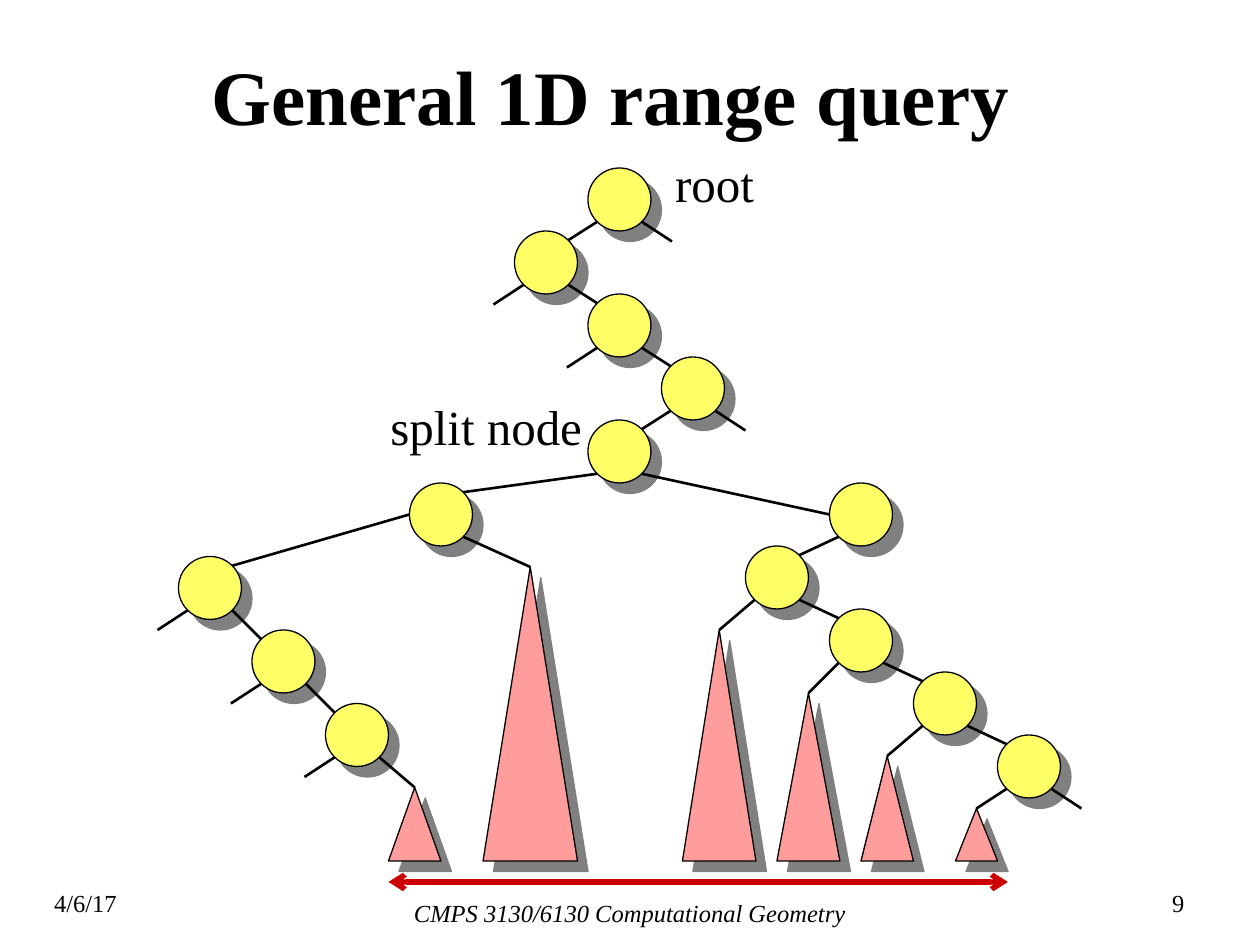
import math
from dataclasses import dataclass

import pptx
import pptx.dml.color
import pptx.enum.shapes
import pptx.enum.text
import pptx.oxml
import pptx.oxml.ns
import pptx.util

Cm, Pt = pptx.util.Cm, pptx.util.Pt
RGB = pptx.dml.color.RGBColor
SHAPE = pptx.enum.shapes.MSO_SHAPE
STRAIGHT = pptx.enum.shapes.MSO_CONNECTOR.STRAIGHT
ALIGN = pptx.enum.text.PP_ALIGN
AUTO_SIZE = pptx.enum.text.MSO_AUTO_SIZE
NS = pptx.oxml.ns.nsdecls("a")


@dataclass(frozen=True)
class Theme:
    font: str = "Times New Roman"
    ink: str = "000000"
    node: str = "FFFF66"
    subtree: str = "FF9D9D"
    shadow: str = "808080"
    range: str = "CC0000"
    title_size: float = 44
    label_size: float = 28
    footer_size: float = 14
    outline: float = 0.75
    edge: float = 1.5
    arrow: float = 3


@dataclass(frozen=True)
class Node:
    """A tree node, centred at a grid position."""
    x: float
    y: float

    def corner(self, dx: int, dy: int) -> tuple[float, float]:
        """Rim point towards (dx, dy), each -1, 0 or 1."""
        reach = RADIUS / math.hypot(dx, dy)
        return self.x + dx * reach, self.y + dy * reach


@dataclass(frozen=True)
class Subtree:
    left: float
    top: float
    width: float
    parent: str
    side: int


@dataclass(frozen=True)
class Label:
    text: str
    left: float
    top: float
    width: float
    height: float
    size: float
    align: ALIGN = ALIGN.LEFT
    italic: bool = False


THEME = Theme()
GRID = 25.4 / 120  # cm in one grid step
RADIUS = 3
BASE = 82
LEFT, RIGHT = -1, 1

NODES = {
    "root": Node(59, 19), "path 1": Node(52, 25), "path 2": Node(59, 31),
    "path 3": Node(66, 37), "split": Node(59, 43),
    "left 1": Node(42, 49), "left 2": Node(20, 56),
    "left 3": Node(27, 63), "left 4": Node(34, 70),
    "right 1": Node(82, 49), "right 2": Node(74, 55), "right 3": Node(82, 61),
    "right 4": Node(90, 67), "right 5": Node(98, 73),
}
SUBTREES = [
    Subtree(46, 54, 9, "left 1", RIGHT), Subtree(37, 75, 5, "left 4", RIGHT),
    Subtree(65, 60, 7, "right 2", LEFT), Subtree(74, 66, 6, "right 3", LEFT),
    Subtree(82, 72, 5, "right 4", LEFT), Subtree(91, 77, 4, "right 5", LEFT),
]
CHAINS = [
    ["root", "path 1", "path 2", "path 3", "split", "left 1"],
    ["left 2", "left 3", "left 4"],
    ["right 1", "right 2", "right 3", "right 4", "right 5"],
]
STUBS = [("root", RIGHT), ("path 1", LEFT), ("path 2", LEFT), ("path 3", RIGHT),
         ("left 2", LEFT), ("left 3", LEFT), ("left 4", LEFT), ("right 5", RIGHT)]
LABELS = [
    Label("root", 13.36, 2.97, 2.11, 1.45, THEME.label_size),
    Label("split node", 7.62, 7.87, 4.37, 1.45, THEME.label_size),
    Label("4/6/17", 0.84, 17.78, 1.78, 0.86, THEME.footer_size),
    Label("CMPS 3130/6130 Computational Geometry", 8, 17.98, 9.4, 0.86,
          THEME.footer_size, ALIGN.CENTER, True),
    Label("9", 23.04, 17.78, 1.09, 0.86, THEME.footer_size, ALIGN.RIGHT),
]


def grid(*steps: float) -> list[pptx.util.Length]:
    return [Cm(n * GRID) for n in steps]


def write(tf, text: str, align: ALIGN, **fmt):
    p = tf.paragraphs[0]
    p.alignment = align
    r = p.add_run()
    r.text = text
    r.font.color.rgb = RGB.from_string(THEME.ink)
    for name, value in ({"name": THEME.font} | fmt).items():
        setattr(r.font, name, value)
    return p


def add_title(s, text: str) -> None:
    sp = s.shapes.title
    place = {"left": Cm(4.01), "top": Cm(0.43), "width": Cm(20.96), "height": Cm(3.18)}
    for name, value in place.items():
        setattr(sp, name, value)
    tf = sp.text_frame
    tf.auto_size = AUTO_SIZE.NONE
    tf.vertical_anchor = pptx.enum.text.MSO_ANCHOR.MIDDLE
    p = write(tf, text, ALIGN.LEFT, size=Pt(THEME.title_size), bold=True)
    p.line_spacing = 0.9


def add_label(s, label: Label) -> None:
    tf = s.shapes.add_textbox(Cm(label.left), Cm(label.top),
                              Cm(label.width), Cm(label.height)).text_frame
    tf.word_wrap = False
    tf.auto_size = AUTO_SIZE.SHAPE_TO_FIT_TEXT
    write(tf, label.text, label.align, size=Pt(label.size), italic=label.italic)


def add_solid(s, kind: SHAPE, box: tuple, fill: str):
    """Add an outlined shape with a hard shadow down to the right."""
    sp = s.shapes.add_shape(kind, *grid(*box))
    sp.fill.solid()
    sp.fill.fore_color.rgb = RGB.from_string(fill)
    sp.line.color.rgb = RGB.from_string(THEME.ink)
    sp.line.width = Pt(THEME.outline)
    sp.shadow.inherit = False
    effects = sp._element.spPr.find(pptx.oxml.ns.qn("a:effectLst"))
    effects.append(pptx.oxml.parse_xml(
        f'<a:outerShdw {NS} blurRad="0" dist="{Pt(8.5)}" dir="2700000" algn="ctr" '
        f'rotWithShape="0"><a:srgbClr val="{THEME.shadow}"/></a:outerShdw>'))
    return sp


def add_line(s, start: tuple, end: tuple, color: str = THEME.ink,
             width: float = THEME.edge):
    line = s.shapes.add_connector(STRAIGHT, *grid(*start, *end))
    line.line.color.rgb = RGB.from_string(color)
    line.line.width = Pt(width)
    line._element.spPr.append(pptx.oxml.parse_xml(f"<a:effectLst {NS}/>"))
    return line


def add_subtree(s, tree: Subtree) -> None:
    sp = add_solid(s, SHAPE.ISOSCELES_TRIANGLE,
                   (tree.left, tree.top, tree.width, BASE - tree.top), THEME.subtree)
    apex = (tree.left + tree.width / 2, tree.top)
    line = add_line(s, NODES[tree.parent].corner(tree.side, 1), apex)
    line.end_connect(sp, 0)


def add_edges(s) -> None:
    for chain in CHAINS:
        for parent, child in zip(chain, chain[1:]):
            a, b = NODES[parent], NODES[child]
            side = RIGHT if b.x > a.x else LEFT
            add_line(s, a.corner(side, 1), b.corner(-side, -1))
    add_line(s, NODES["left 1"].corner(LEFT, 0), NODES["left 2"].corner(RIGHT, -1))
    add_line(s, NODES["split"].corner(RIGHT, 1), NODES["right 1"].corner(LEFT, 0))
    for name, side in STUBS:
        node = NODES[name]
        add_line(s, node.corner(side, 1), (node.x + 5 * side, node.y + 4))


def add_range_arrow(s) -> None:
    line = add_line(s, (37, 84), (96, 84), THEME.range, THEME.arrow)
    for tag in ("headEnd", "tailEnd"):
        line.line._get_or_add_ln().append(
            pptx.oxml.parse_xml(f'<a:{tag} {NS} type="arrow"/>'))


def main() -> None:
    prs = pptx.Presentation()
    prs.slide_width, prs.slide_height = Cm(25.4), Cm(19.05)
    s = prs.slides.add_slide(prs.slide_layouts[5])
    add_title(s, "General 1D range query")
    for node in NODES.values():
        add_solid(s, SHAPE.OVAL, (node.x - RADIUS, node.y - RADIUS,
                                  2 * RADIUS, 2 * RADIUS), THEME.node)
    for tree in SUBTREES:
        add_subtree(s, tree)
    add_edges(s)
    add_range_arrow(s)
    for label in LABELS:
        add_label(s, label)
    prs.save("out.pptx")


if __name__ == "__main__":
    main()
